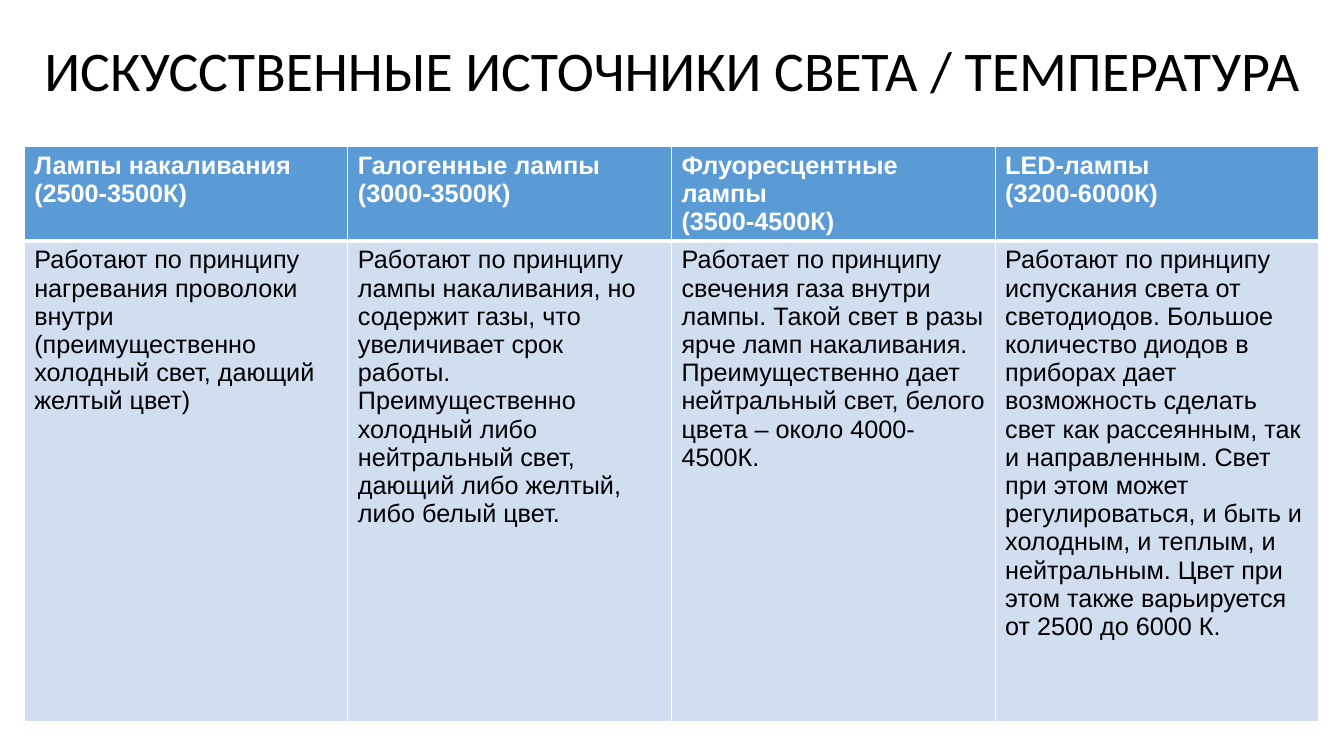
from lxml import etree
from pptx import Presentation
from pptx.dml.color import RGBColor
from pptx.enum.text import MSO_ANCHOR as Anchor, MSO_AUTO_SIZE as Fit, PP_ALIGN as Align
from pptx.oxml.ns import qn
from pptx.util import Inches, Pt

# Content
TITLE = "ИСКУССТВЕННЫЕ ИСТОЧНИКИ СВЕТА / ТЕМПЕРАТУРА"
LAMPS = [
    ("Лампы накаливания \v(2500-3500К)",
     "Работают по принципу нагревания проволоки внутри (преимущественно "
     "холодный свет, дающий желтый цвет)"),
    ("Галогенные лампы \v(3000-3500К)",
     "Работают по принципу лампы накаливания, но содержит газы, что "
     "увеличивает срок работы. Преимущественно холодный либо нейтральный "
     "свет, дающий либо желтый, либо белый цвет."),
    ("Флуоресцентные лампы \v(3500-4500К)",
     "Работает по принципу свечения газа внутри лампы. Такой свет в разы "
     "ярче ламп накаливания. Преимущественно дает нейтральный свет, белого "
     "цвета – около 4000-4500К."),
    ("LED-лампы \v(3200-6000К)",
     "Работают по принципу испускания света от светодиодов. Большое "
     "количество диодов в приборах дает возможность сделать свет как "
     "рассеянным, так и направленным. Свет при этом может регулироваться, "
     "и быть и холодным, и теплым, и нейтральным. Цвет при этом также "
     "варьируется от 2500 до 6000 К."),
]
HEX = {"ink": "000000", "white": "FFFFFF", "head": "5B9BD5", "body": "D0DEEF"}

# Layout in inches
WIDE, HIGH = 13.33, 7.5
TOP, LEFT, COL = 1.45, 0.24, 3.21
ROWS = [0.78, 4.77]


def write(frame, text, font="Arial", size=18, color="ink", bold=False,
          align=Align.LEFT, lead=1.0):
    para = frame.paragraphs[0]
    para.text = text
    para.alignment, para.line_spacing = align, lead
    for run in para.runs:
        run.font.name, run.font.size, run.font.bold = font, Pt(size), bold
        run.font.color.rgb = RGBColor.from_string(HEX[color])


def edge(cell, base):
    """White cell borders, placed ahead of the fill."""
    props = cell._tc.get_or_add_tcPr()
    for spot, side in enumerate("LRTB"):
        width = base if side == "B" else 1
        line = etree.Element(qn(f"a:ln{side}"), w=str(Pt(width)))
        fill = etree.SubElement(line, qn("a:solidFill"))
        etree.SubElement(fill, qn("a:srgbClr"), val=HEX["white"])
        props.insert(spot, line)


deck = Presentation()
deck.slide_width, deck.slide_height = Inches(WIDE), Inches(HIGH)
slide = deck.slides.add_slide(deck.slide_layouts[5])

# Title
title = slide.shapes.title
title.left, title.top = 0, 0
title.width, title.height = Inches(WIDE), Inches(TOP)
frame = title.text_frame
frame.word_wrap, frame.auto_size = True, Fit.NONE
frame.vertical_anchor = Anchor.MIDDLE
write(frame, TITLE, font="Calibri", size=40, align=Align.CENTER, lead=0.9)

# Table of lamps
grid = slide.shapes.add_table(
    len(ROWS), len(LAMPS), Inches(LEFT), Inches(TOP),
    Inches(COL * len(LAMPS)), Inches(sum(ROWS))).table
for row, tall in zip(grid.rows, ROWS):
    row.height = Inches(tall)
for col, lamp in enumerate(LAMPS):
    grid.columns[col].width = Inches(COL)
    for row, text in enumerate(lamp):
        head = row == 0
        cell = grid.cell(row, col)
        cell.fill.solid()
        cell.fill.fore_color.rgb = RGBColor.from_string(HEX["head" if head else "body"])
        edge(cell, 3 if head else 1)
        write(cell.text_frame, text, color="white" if head else "ink", bold=head)
        if not head:
            # The shared edge keeps the header's heavier line
            top = cell._tc.tcPr.find(qn("a:lnT"))
            top.set("w", str(Pt(3)))

deck.save("out.pptx")
